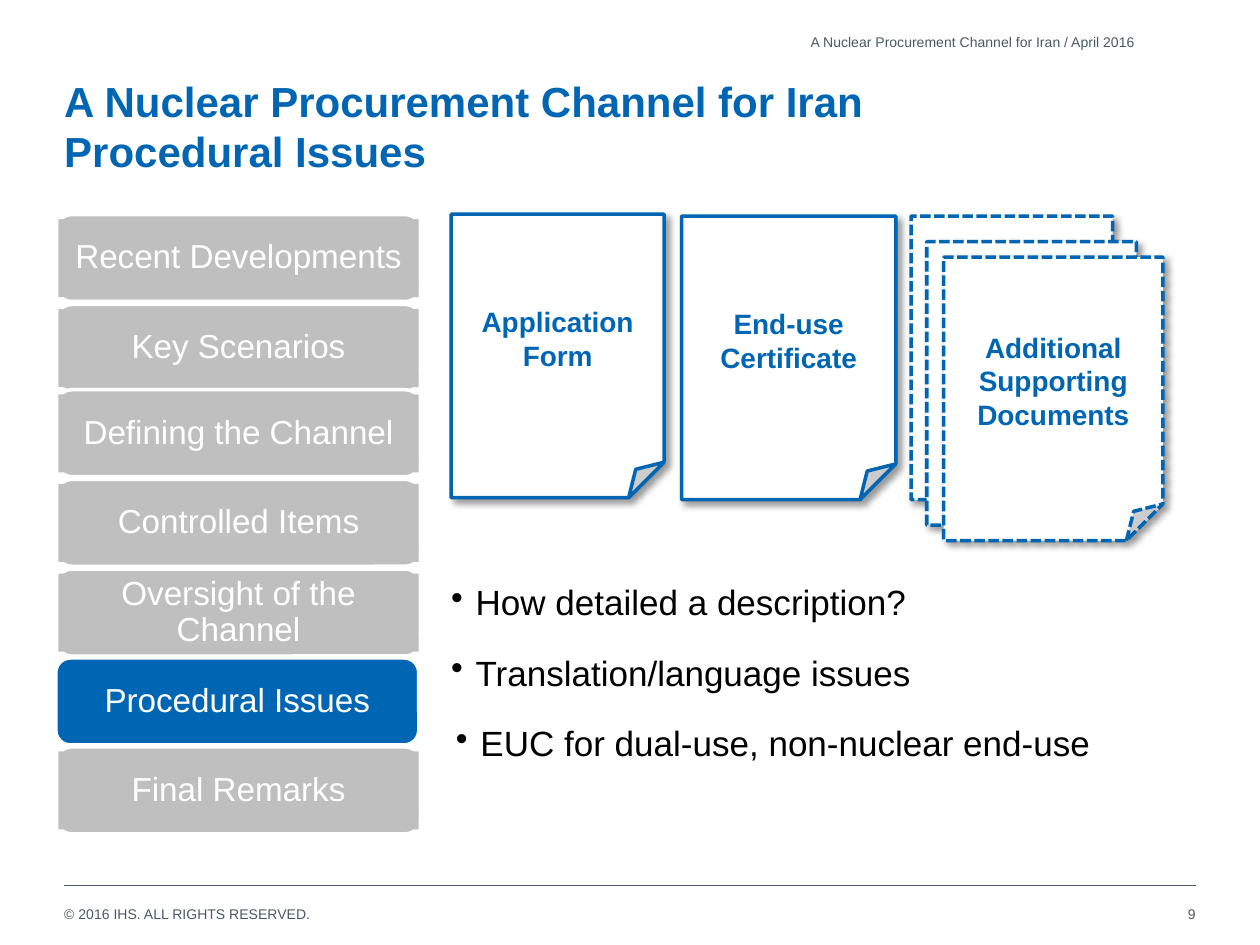
from dataclasses import dataclass, field

from lxml.etree import SubElement
from pptx import Presentation
from pptx.dml.color import RGBColor
from pptx.enum.dml import MSO_LINE
from pptx.enum.shapes import MSO_CONNECTOR as Connector, MSO_SHAPE as Preset
from pptx.enum.text import MSO_ANCHOR as Anchor, PP_ALIGN as Align
from pptx.oxml.ns import qn
from pptx.slide import Slide
from pptx.util import Pt

COLOURS = {"blue": "0066B3", "slate": "495965", "grey": "BFBFBF",
           "white": "FFFFFF", "black": "000000"}
SMALL = {"size": Pt(8), "colour": "slate"}
TITLE = {"size": Pt(24), "colour": "blue", "bold": True}
PAGE = {"size": Pt(16), "colour": "blue", "bold": True}
BULLET = {"size": Pt(20), "colour": "black"}
MENU = {"size": Pt(19), "colour": "white"}


@dataclass
class SlideBuilder:
    """Draws styled elements on one slide, with lengths in points."""
    slide: Slide
    font: str = "Arial"
    colours: dict = field(default_factory=lambda: COLOURS)

    def colour(self, name):
        return RGBColor.from_string(self.colours[name])

    def fill_text(self, shape, lines, style, margins=(0, 0), anchor=Anchor.TOP,
                  bullet=False, **layout):
        frame = shape.text_frame
        across, down = map(Pt, margins)
        settings = {"word_wrap": True, "vertical_anchor": anchor,
                    "margin_left": across, "margin_right": across,
                    "margin_top": down, "margin_bottom": down}
        for name, value in settings.items():
            setattr(frame, name, value)
        for index, line in enumerate(lines):
            paragraph = frame.add_paragraph() if index else frame.paragraphs[0]
            paragraph.text = line
            for name, value in layout.items():
                setattr(paragraph, name, value)
            if bullet:
                properties = paragraph._p.get_or_add_pPr()
                properties.set("marL", str(Pt(14)))
                properties.set("indent", str(Pt(-14)))
                SubElement(properties, qn("a:buChar"), char="•")
            font = paragraph.font
            for name, value in {"name": self.font, **style}.items():
                if name == "colour":
                    font.color.rgb = self.colour(value)
                else:
                    setattr(font, name, value)

    def text(self, box, lines, style, **options):
        shape = self.slide.shapes.add_textbox(*map(Pt, box))
        self.fill_text(shape, lines, style, **options)

    def shape(self, preset, box, fill, line=None):
        shape = self.slide.shapes.add_shape(preset, *map(Pt, box))
        shape.shadow.inherit = False
        shape.fill.solid()
        shape.fill.fore_color.rgb = self.colour(fill)
        if line:
            shape.line.color.rgb = self.colour(line)
            shape.line.width = Pt(2)
        else:
            shape.line.fill.background()
        return shape

    def page(self, box, lines=(), dashed=False):
        shape = self.shape(Preset.FOLDED_CORNER, box, "white", "blue")
        if dashed:
            shape.line.dash_style = MSO_LINE.SQUARE_DOT
        effects = shape._element.spPr.find(qn("a:effectLst"))
        shadow = SubElement(effects, qn("a:outerShdw"), blurRad=str(Pt(4)),
                            dist=str(Pt(3)), dir="2700000", algn="tl", rotWithShape="0")
        shade = SubElement(shadow, qn("a:srgbClr"), val=self.colours["black"])
        SubElement(shade, qn("a:alpha"), val="40000")
        if lines:
            self.fill_text(shape, lines, PAGE, margins=(6, 3.6), anchor=Anchor.MIDDLE,
                           alignment=Align.CENTER)

    def menu_item(self, top, label, active=False):
        left = 31.9 if active else 32.6
        fill = "blue" if active else "grey"
        self.shape(Preset.ROUNDED_RECTANGLE, (left, top, 207.4, 49.7), fill, "white")
        box = (left + 0.7, top + 2.6, 206, 44.6)
        options = {"margins": (6, 3), "anchor": Anchor.MIDDLE,
                   "alignment": Align.CENTER, "line_spacing": 0.9}
        if active:
            self.text(box, [label], MENU, **options)
        else:
            self.fill_text(self.shape(Preset.RECTANGLE, box, fill), [label], MENU, **options)

    def rule(self, left, right, top):
        line = self.slide.shapes.add_connector(Connector.STRAIGHT, *map(Pt, (left, top, right, top)))
        line.line.color.rgb = self.colour("slate")
        line.line.width = Pt(0.5)
        SubElement(line._element.spPr, qn("a:effectLst"))


def main():
    presentation = Presentation()
    presentation.slide_width, presentation.slide_height = Pt(720), Pt(540)
    builder = SlideBuilder(presentation.slides.add_slide(presentation.slide_layouts[6]))

    right = {"anchor": Anchor.MIDDLE, "alignment": Align.RIGHT}
    builder.text((36.7, 517.7, 493, 9.4), ["© 2016 IHS. ALL RIGHTS RESERVED."], SMALL)
    builder.rule(36.7, 683.3, 506.2)
    builder.text((36.7, 43.2, 646.6, 62.6),
                 ["A Nuclear Procurement Channel for Iran\vProcedural Issues"], TITLE)
    builder.text((520.6, 507.6, 162.7, 28.8), ["9"], SMALL, **right)
    builder.text((36.7, 15.1, 612, 17.3),
                 ["A Nuclear Procurement Channel for Iran / April 2016"], SMALL, **right)

    for left, top, width, lines, dashed in (
            (257.8, 122.4, 121.7, ["Application", "Form"], False),
            (389.5, 123.5, 122.4, ["End-use", "Certificate"], False),
            (520.6, 123.5, 115.2, [], True),
            (529.6, 138.1, 119.8, [], True),
            (539.3, 146.9, 125.3, ["Additional Supporting", "Documents"], True)):
        builder.page((left, top, width, 162), lines, dashed)

    for row, (left, question) in enumerate((
            (257.8, "How detailed a description?"),
            (257.8, "Translation/language issues"),
            (260.6, "EUC for dual-use, non-nuclear end-use"))):
        builder.text((left, 331.9 + 40.3 * row, 424.8, 31.7), [question], BULLET,
                     bullet=True, space_after=Pt(6))

    for top, label in ((122.6, "Recent Developments"), (174, "Key Scenarios"),
                       (222.7, "Defining the Channel"), (273.9, "Controlled Items"),
                       (325.2, "Oversight of the Channel"), (376, "Procedural Issues"),
                       (426.8, "Final Remarks")):
        builder.menu_item(top, label, active=label == "Procedural Issues")

    presentation.save("out.pptx")


if __name__ == "__main__":
    main()
